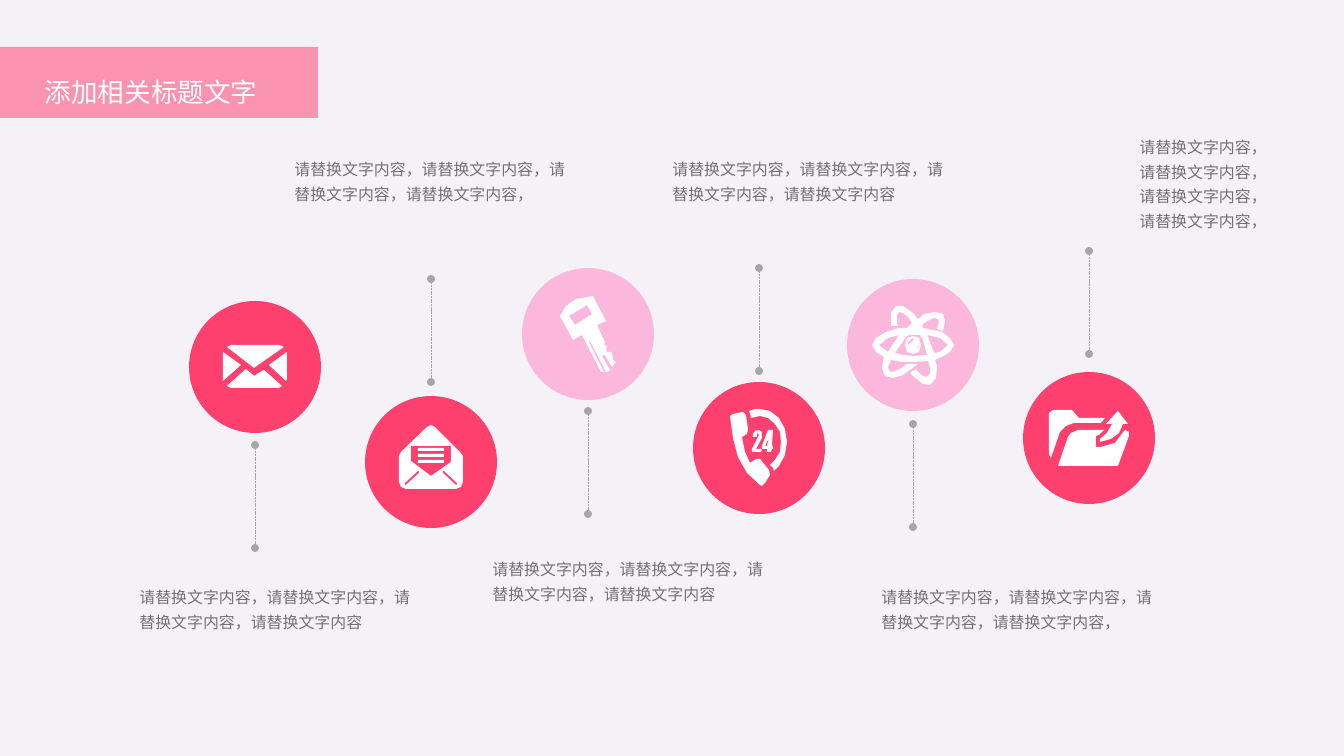
import pptx
import pptx.dml.color
import pptx.enum.dml
import pptx.enum.shapes
import pptx.enum.text
import pptx.oxml
import pptx.oxml.ns
import pptx.util

RGBColor = pptx.dml.color.RGBColor
BACKGROUND = RGBColor(0xF4, 0xF2, 0xF7)
ROSE = RGBColor(0xFE, 0x40, 0x6F)
PINK = RGBColor(0xFB, 0xB8, 0xDC)
WHITE = RGBColor(0xFF, 0xFF, 0xFF)
LINE_GREY = RGBColor(0xA6, 0xA6, 0xA6)
TEXT_GREY = RGBColor(0x76, 0x71, 0x71)
FONT = "Noto Sans CJK SC"

PX = 9565  # EMU
SLIDE_SIZE = (1344, 756)
CIRCLE = 132
LINE_LENGTH = 103
TITLE = "添加相关标题文字"
BANNER_BOX = (0, 47, 318, 71)
TITLE_BOX = (40, 64, 262, 42)
BODY = "请替换文字内容，请替换文字内容，请替换文字内容，请替换文字内容"
WIDE, NARROW = (292, 57), (137, 133)

# Icon outlines in px from the circle's centre; inner outlines cut holes.
ENVELOPE = [
    [(-24, -22), (24, -22), (29, -20), (-1, 1), (-28, -20)],
    [(32, -15), (14, -2), (31, 14), (32, 12)],
    [(27, 19), (24, 21), (-24, 21), (-28, 19), (-9, 2), (-2, 8), (0, 9), (2, 7), (9, 3)],
    [(-32, 14), (-14, -2), (-32, -15)],
]
LETTER = [
    [(29, -10), (32, -6), (32, 20), (30, 25), (25, 27), (-25, 27), (-30, 25), (-32, 20),
     (-32, -6), (-30, -10), (-4, -35), (0, -37), (4, -35)],
    [(-20, -16), (-20, -1), (0, 14), (20, 0), (20, -16)],
    *[[(-13, top), (13, top), (13, top + 3), (-13, top + 3)] for top in (-14, -8, -2)],
    *[[(side * x, y) for x, y in ((25, 23), (12, 11), (12, 9), (13, 9), (26, 21), (26, 23))]
      for side in (-1, 1)],
]
KEY = [
    [(-28, -18), (-22, -28), (-12, -35), (5, -38), (18, -13), (9, -9), (17, 8), (16, 11),
     (19, 12), (18, 15), (19, 18), (23, 18), (25, 23), (25, 26), (28, 28), (24, 33),
     (17, 21), (14, 22), (22, 36), (20, 38), (18, 38), (2, 7), (1, 8), (16, 38),
     (13, 38), (-6, 1), (-15, 6)],
    [(-19, -18), (-13, -9), (4, -20), (-1, -29)],
]
PHONE = [
    [(6, 35), (11, 27), (10, 22), (1, 11), (-3, 11), (-9, 15), (-14, 4), (-17, -11),
     (-12, -14), (-11, -19), (-13, -33), (-16, -36), (-26, -34), (-29, -32), (-26, -10),
     (-21, 9), (-12, 25), (1, 37), (3, 38)],
    [(1, -39), (11, -37), (20, -30), (26, -19), (28, -6), (26, 7), (20, 18), (15, 23),
     (14, 20), (11, 17), (16, 12), (21, 4), (22, -6), (21, -16), (16, -24), (9, -30),
     (1, -32), (-8, -30), (-9, -35), (-10, -37), (-4, -39)],
    [(2, 4), (-7, 4), (-7, 1), (-2, -9), (0, -13), (-1, -15), (-2, -14), (-2, -11),
     (-6, -11), (-6, -14), (-4, -17), (0, -18), (3, -16), (3, -10), (-3, 1), (3, 1)],
    [(14, 1), (13, 1), (12, 4), (8, 4), (8, 1), (3, 1), (3, -2), (9, -18), (14, -18),
     (13, -2), (14, -2)],
    [(8, -2), (6, -2), (10, -10)],
]
ATOM = [
    [(-6, -17), (-14, -17), (-27, -13), (-37, -7), (-41, 0), (-37, 7), (-29, 12), (-31, 23),
     (-28, 31), (-20, 33), (-10, 30), (5, 19), (-6, 19), (-13, 24), (-20, 27), (-24, 26),
     (-25, 22), (-22, 15), (-11, 17), (1, 17), (15, 16), (17, 22), (17, 29), (14, 32),
     (10, 31), (6, 28), (3, 24), (-3, 28), (1, 32), (10, 39), (17, 40), (23, 33),
     (24, 21), (22, 15), (29, 12), (37, 7), (41, 0), (37, -7), (29, -13), (10, -17),
     (9, -20), (14, -24), (21, -27), (25, -26), (26, -23), (24, -16), (30, -14), (32, -24),
     (30, -31), (22, -33), (11, -31), (5, -26), (0, -32), (-10, -39), (-17, -39),
     (-22, -32), (-22, -19), (-15, -19), (-16, -22), (-16, -30), (-14, -33), (-10, -32),
     (-5, -28), (-1, -22)],
    [(14, -10), (27, -7), (35, 0), (27, 7), (21, 8), (15, -8)],
    [(-25, 7), (-34, 0), (-25, -7), (-14, -10)],
    [(14, 10), (10, -5), (7, -10), (-4, -10), (-7, -8), (-18, 8), (-10, 10), (1, 11)],
    [(0, -9), (6, -7), (8, 0), (6, 7), (0, 9), (-6, 7), (-8, 0), (-6, -7)],
    [(6, -3), (6, 2), (1, 7), (5, 2)],
    [(-5, 3), (-5, -3), (0, -7), (1, -5), (-4, -1)],
]
FOLDER = [
    [(16, -20), (-10, -20), (-17, -28), (-36, -28), (-40, -25), (-40, 16), (-38, 20),
     (-29, -6), (-23, -12), (-15, -15), (12, -15)],
    [(23, -14), (17, -14), (29, -27), (39, -14), (34, -14), (30, -5), (22, 1), (11, 4),
     (11, 1), (18, -5)],
    [(29, 28), (-31, 28), (-21, -1), (-18, -5), (-11, -8), (15, -8), (10, -3), (7, -2),
     (7, 9), (12, 9), (26, 5), (36, -8), (40, -6), (40, -2)],
]

# icon, colour, circle centre, top of line, text position, text size, text
STEPS = [
    (ENVELOPE, ROSE, (255, 367), 445, (130, 577), WIDE, BODY),
    (LETTER, ROSE, (431, 462), 279, (285, 149), WIDE, BODY + "，"),
    (KEY, PINK, (588, 334), 411, (483, 549), WIDE, BODY),
    (PHONE, ROSE, (759, 448), 268, (663, 149), WIDE, BODY),
    (ATOM, PINK, (913, 345), 424, (872, 577), WIDE, BODY + "，"),
    (FOLDER, ROSE, (1089, 438), 251, (1130, 127), NARROW, BODY + "，"),
]


def scaled(lengths):
    return [length * PX for length in lengths]


def add_element(parent, tag, **attributes):
    element = pptx.oxml.parse_xml(f"<{tag} {pptx.oxml.ns.nsdecls('a')}/>")
    for name, value in attributes.items():
        element.set(name, value)
    parent.append(element)


def paint(shape, color):
    shape.shadow.inherit = False
    shape.fill.solid()
    shape.fill.fore_color.rgb = color
    shape.line.fill.background()


def write(shape, text, size, color):
    frame = shape.text_frame
    frame.word_wrap = True
    frame.auto_size = pptx.enum.text.MSO_AUTO_SIZE.SHAPE_TO_FIT_TEXT
    frame.vertical_anchor = pptx.enum.text.MSO_ANCHOR.TOP
    frame.text = text
    paragraph = frame.paragraphs[0]
    paragraph.alignment = pptx.enum.text.PP_ALIGN.LEFT
    paragraph.line_spacing = 1.3
    paragraph.font.size = pptx.util.Pt(size)
    paragraph.font.color.rgb = color
    paragraph.font.name = FONT
    properties = paragraph._p.pPr.find(pptx.oxml.ns.qn("a:defRPr"))
    add_element(properties, "a:ea", typeface=FONT)


def add_circle(shapes, center, color):
    left, top = (value - CIRCLE // 2 for value in center)
    circle = shapes.add_shape(pptx.enum.shapes.MSO_SHAPE.OVAL,
                              *scaled((left, top, CIRCLE, CIRCLE)))
    paint(circle, color)


def add_icon(shapes, outlines, center):
    builder = shapes.build_freeform(*outlines[0][0], scale=PX)
    for index, outline in enumerate(outlines):
        if index:
            builder.move_to(*outline[0])
        builder.add_line_segments(outline[1:], close=True)
    paint(builder.convert_to_shape(*scaled(center)), WHITE)


def add_dotted_line(shapes, x, top):
    line = shapes.add_connector(pptx.enum.shapes.MSO_CONNECTOR.STRAIGHT,
                                *scaled((x, top, x, top + LINE_LENGTH)))
    line.line.color.rgb = LINE_GREY
    line.line.width = pptx.util.Pt(0.5)
    line.line.dash_style = pptx.enum.dml.MSO_LINE.SQUARE_DOT
    outline = line.line._get_or_add_ln()
    add_element(outline, "a:headEnd", type="oval")
    add_element(outline, "a:tailEnd", type="oval")
    add_element(line._element.spPr, "a:effectLst")


def add_heading(slide):
    banner = slide.shapes.add_shape(pptx.enum.shapes.MSO_SHAPE.RECTANGLE, *scaled(BANNER_BOX))
    paint(banner, ROSE)
    color = banner._element.spPr.find(".//" + pptx.oxml.ns.qn("a:srgbClr"))
    add_element(color, "a:alpha", val="53000")
    title = slide.shapes.title
    banner._element.addnext(title._element)
    title.left, title.top, title.width, title.height = scaled(TITLE_BOX)
    frame = title.text_frame
    frame.margin_left = frame.margin_right = pptx.util.Inches(0.05)
    frame.margin_top = frame.margin_bottom = pptx.util.Inches(0.02)
    write(title, TITLE, 20, WHITE)


def main():
    presentation = pptx.Presentation()
    presentation.slide_width, presentation.slide_height = scaled(SLIDE_SIZE)
    slide = presentation.slides.add_slide(presentation.slide_layouts[5])
    slide.background.fill.solid()
    slide.background.fill.fore_color.rgb = BACKGROUND
    add_heading(slide)
    for icon, color, center, line_top, position, size, text in STEPS:
        add_circle(slide.shapes, center, color)
        add_icon(slide.shapes, icon, center)
        add_dotted_line(slide.shapes, center[0], line_top)
        write(slide.shapes.add_textbox(*scaled(position + size)), text, 12, TEXT_GREY)
    presentation.save("out.pptx")


if __name__ == "__main__":
    main()
